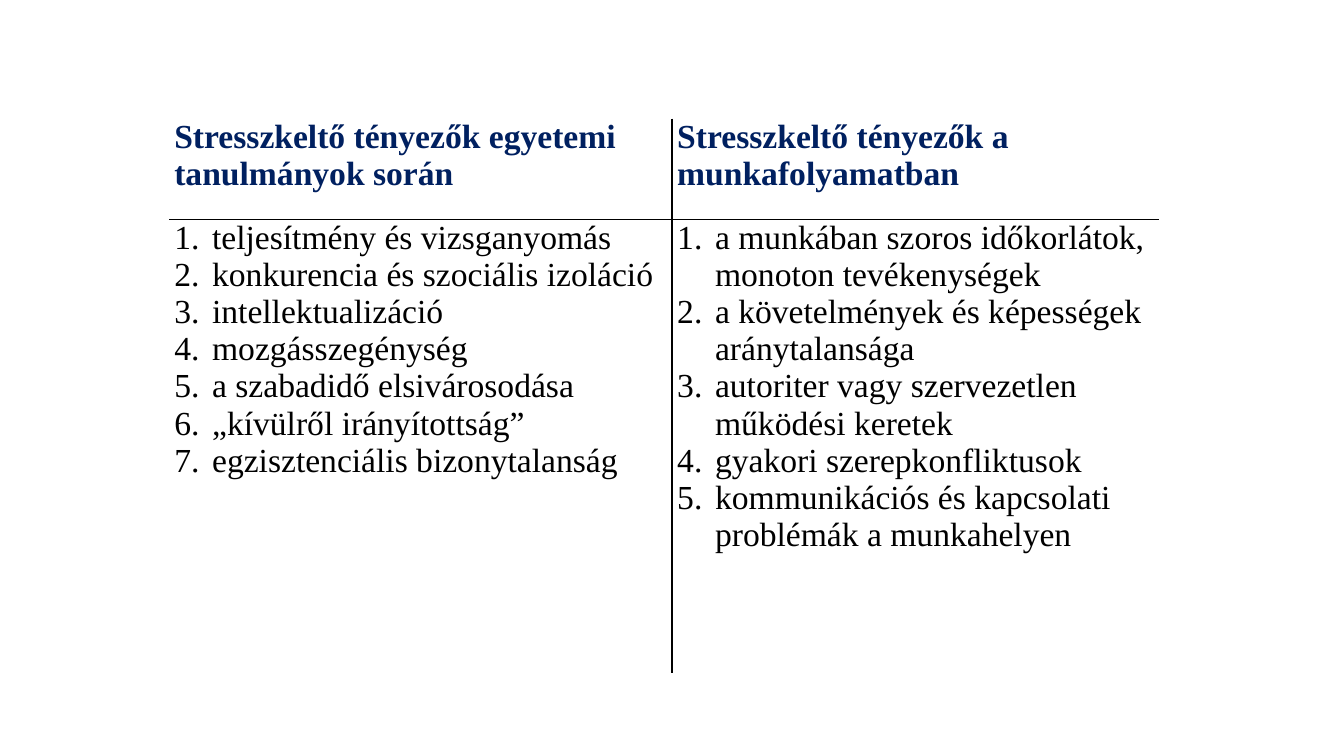
from dataclasses import dataclass

from lxml.etree import SubElement
from pptx import Presentation
from pptx.dml.color import RGBColor as RGB
from pptx.enum.text import MSO_ANCHOR as Anchor
from pptx.oxml import parse_xml
from pptx.oxml.ns import nsdecls, qn
from pptx.util import Pt

PX = 9525
NO_STYLE = "{2D5ABB26-0587-4C30-8999-92F81FD0307C}"


@dataclass(frozen=True)
class Theme:
    """Colours, type and line sizes of the slide."""
    font: str = "Times New Roman"
    size: int = 24
    heading: str = "002060"
    text: str = "000000"
    rule: str = "000000"
    rule_pt: int = 1
    inset: int = 5
    indent: int = 36


THEME = Theme()

STRESS_FACTORS = {
    "Stresszkeltő tényezők egyetemi tanulmányok során": [
        "teljesítmény és vizsganyomás",
        "konkurencia és szociális izoláció",
        "intellektualizáció",
        "mozgásszegénység",
        "a szabadidő elsivárosodása",
        "„kívülről irányítottság”",
        "egzisztenciális bizonytalanság",
    ],
    "Stresszkeltő tényezők a munkafolyamatban": [
        "a munkában szoros időkorlátok, monoton tevékenységek",
        "a követelmények és képességek aránytalansága",
        "autoriter vagy szervezetlen működési keretek",
        "gyakori szerepkonfliktusok",
        "kommunikációs és kapcsolati problémák a munkahelyen",
    ],
}


def px(n):
    """Turn px into EMU."""
    return n * PX


def number(p):
    """Give a paragraph automatic numbering with a hanging indent."""
    pPr = p._p.get_or_add_pPr()
    pPr.set("marL", str(px(THEME.indent)))
    pPr.set("indent", str(-px(THEME.indent)))
    SubElement(pPr, qn("a:buFont"), typeface="+mj-lt")
    SubElement(pPr, qn("a:buAutoNum"), type="arabicPeriod")


def set_borders(cell, sides):
    """Draw rules on the given sides of a cell, named in schema order."""
    tcPr = cell._tc.get_or_add_tcPr()
    for i, side in enumerate(sides):
        tcPr.insert(i, parse_xml(
            f'<a:ln{side} {nsdecls("a")} w="{Pt(THEME.rule_pt)}"><a:solidFill>'
            f'<a:srgbClr val="{THEME.rule}"/></a:solidFill></a:ln{side}>'))


def fill_cell(cell, lines, color, bold=False, numbered=False):
    """Write the lines into a cell and format them."""
    cell.fill.background()
    cell.margin_left = cell.margin_right = px(THEME.inset)
    cell.margin_top = cell.margin_bottom = 0
    cell.vertical_anchor = Anchor.TOP
    tf = cell.text_frame
    tf.text = "\n".join(lines)
    for p in tf.paragraphs:
        if numbered:
            number(p)
        for r in p.runs:
            r.font.name = THEME.font
            r.font.size = Pt(THEME.size)
            r.font.bold = bold
            r.font.color.rgb = RGB.from_string(color)


def add_factor_table(slide, left, top, widths, heights):
    """Add the two-column comparison of stress factors."""
    frame = slide.shapes.add_table(
        len(heights), len(widths), px(left), px(top),
        px(sum(widths)), px(sum(heights)))
    table = frame.table
    table.first_row = table.horz_banding = False
    table._tbl.tblPr.find(qn("a:tableStyleId")).text = NO_STYLE
    for row, height in zip(table.rows, heights):
        row.height = px(height)
    for i, (heading, factors) in enumerate(STRESS_FACTORS.items()):
        table.columns[i].width = px(widths[i])
        head, body = table.cell(0, i), table.cell(1, i)
        fill_cell(head, [heading], THEME.heading, bold=True)
        fill_cell(body, factors, THEME.text, numbered=True)
        inner = "RL"[i]
        set_borders(head, inner + "B")
        set_borders(body, inner + "T")


def main():
    """Build and save the slide."""
    prs = Presentation()
    prs.slide_width, prs.slide_height = px(1280), px(720)
    slide = prs.slides.add_slide(prs.slide_layouts[6])
    add_factor_table(slide, 161, 113, widths=(479, 464), heights=(96, 432))
    prs.save("out.pptx")


if __name__ == "__main__":
    main()
